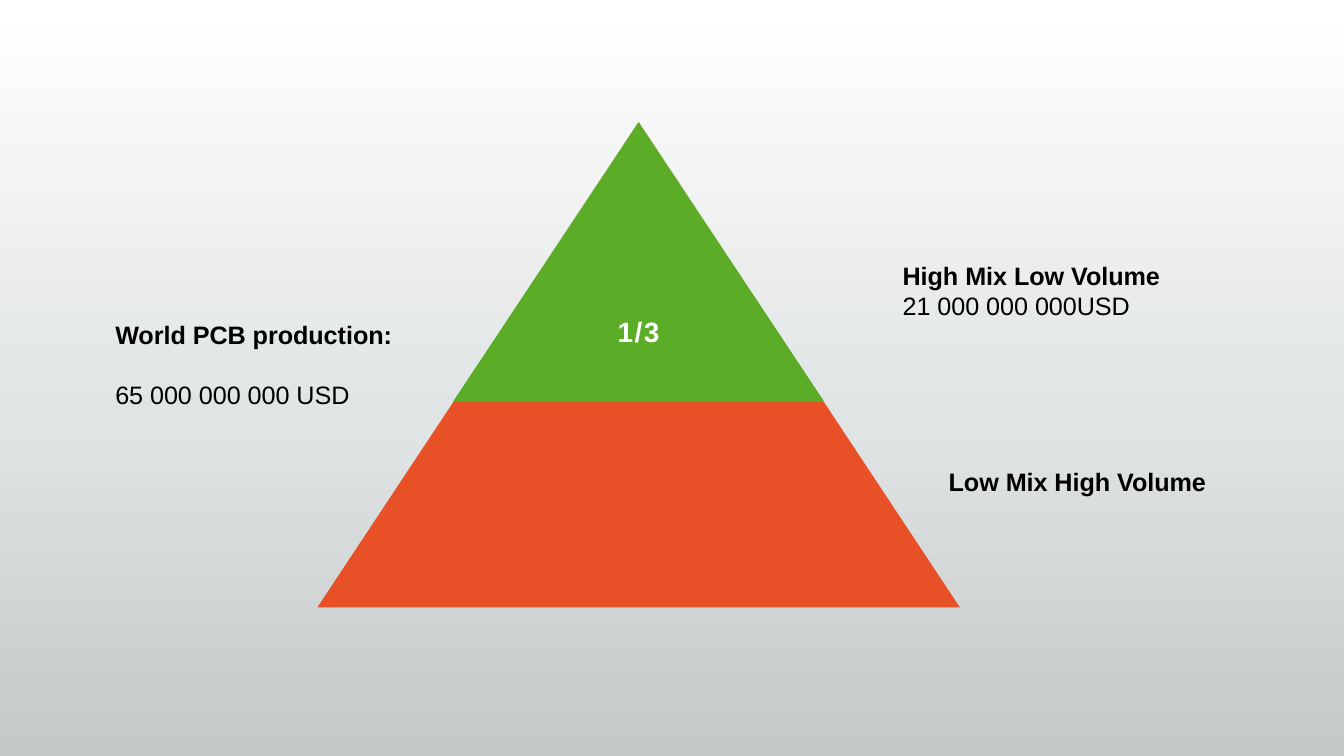
import copy
from dataclasses import dataclass

import pptx
import pptx.dml.color
import pptx.enum.shapes
import pptx.enum.text
import pptx.util

Cm = pptx.util.Cm
Pt = pptx.util.Pt
RGB = pptx.dml.color.RGBColor
KIND = pptx.enum.shapes.MSO_SHAPE
ALIGN = pptx.enum.text.PP_ALIGN
SIZE = pptx.enum.text.MSO_AUTO_SIZE

WHITE = RGB(0xFF, 0xFF, 0xFF)
BLACK = RGB(0x00, 0x00, 0x00)
GREEN = RGB(0x5B, 0xAC, 0x26)
ORANGE = RGB(0xE8, 0x51, 0x27)
GREY = RGB(0xC3, 0xC8, 0xC8)
PALE = RGB(0xE1, 0xE4, 0xE4)

WIDE, HIGH = 25.4, 14.29
APEX, TOP = 12.07, 2.31


@dataclass
class Tier:
    width: float
    height: float
    color: RGB
    text: str = ""


@dataclass
class Label:
    left: float
    top: float
    width: float
    height: float
    head: str
    value: str = ""
    gap: float = 0
    wrap: bool = False


TIERS = [
    Tier(12.14, 9.17, ORANGE),
    Tier(7.01, 5.28, GREEN, "1/3"),
]

LABELS = [
    Label(1.93, 5.92, 5.94, 1.98, "World PCB production:", "65 000 000 000 USD", gap=16),
    Label(16.81, 4.8, 7.19, 1.42, "High Mix Low Volume", "21 000 000 000USD", wrap=True),
    Label(17.68, 8.69, 5.44, 0.84, "Low Mix High Volume"),
]


def write(par, text: str, *, size: float = 13.5, color: RGB = BLACK, bold: bool = False,
          align=ALIGN.LEFT, gap: float = 0, track: int = 0) -> None:
    par.alignment = align
    if gap:
        par.space_before = Pt(gap)
    run = par.add_run()
    run.text = text
    font = run.font
    font.name, font.size, font.bold = "Arial", Pt(size), bold
    font.color.rgb = color
    if track:
        run._r.get_or_add_rPr().set("spc", str(track))


def draw_shape(slide, kind, left: float, top: float, width: float, height: float):
    shape = slide.shapes.add_shape(kind, Cm(left), Cm(top), Cm(width), Cm(height))
    shape.shadow.inherit = False
    shape.line.fill.background()
    return shape


def draw_ground(slide) -> None:
    fill = draw_shape(slide, KIND.RECTANGLE, 0, 0, WIDE, HIGH)
    fill_list = fill.fill
    fill_list.gradient()
    fill_list.gradient_angle = 90
    first = fill.element.spPr.xpath("a:gradFill/a:gsLst/a:gs")[0]
    first.addnext(copy.deepcopy(first))
    for stop, (place, color) in zip(fill_list.gradient_stops,
                                    [(0, GREY), (0.44, PALE), (1, WHITE)]):
        stop.position = place
        stop.color.rgb = color


def draw_tier(slide, tier: Tier) -> None:
    shape = draw_shape(slide, KIND.ISOSCELES_TRIANGLE, APEX - tier.width / 2, TOP,
                       tier.width, tier.height)
    shape.fill.solid()
    shape.fill.fore_color.rgb = tier.color
    if tier.text:
        frame = shape.text_frame
        frame.vertical_anchor = pptx.enum.text.MSO_ANCHOR.MIDDLE
        write(frame.paragraphs[0], tier.text, size=15, color=WHITE, bold=True,
              align=ALIGN.CENTER, track=80)


def draw_label(slide, label: Label) -> None:
    box = slide.shapes.add_textbox(Cm(label.left), Cm(label.top),
                                   Cm(label.width), Cm(label.height))
    frame = box.text_frame
    frame.word_wrap = label.wrap
    frame.auto_size = SIZE.NONE
    write(frame.paragraphs[0], label.head, bold=True)
    if label.value:
        write(frame.add_paragraph(), label.value, gap=label.gap)


def main() -> None:
    deck = pptx.Presentation()
    deck.slide_width, deck.slide_height = Cm(WIDE), Cm(HIGH)
    slide = deck.slides.add_slide(deck.slide_layouts[6])
    draw_ground(slide)
    for tier in TIERS:
        draw_tier(slide, tier)
    for label in LABELS:
        draw_label(slide, label)
    deck.save("out.pptx")


if __name__ == "__main__":
    main()
